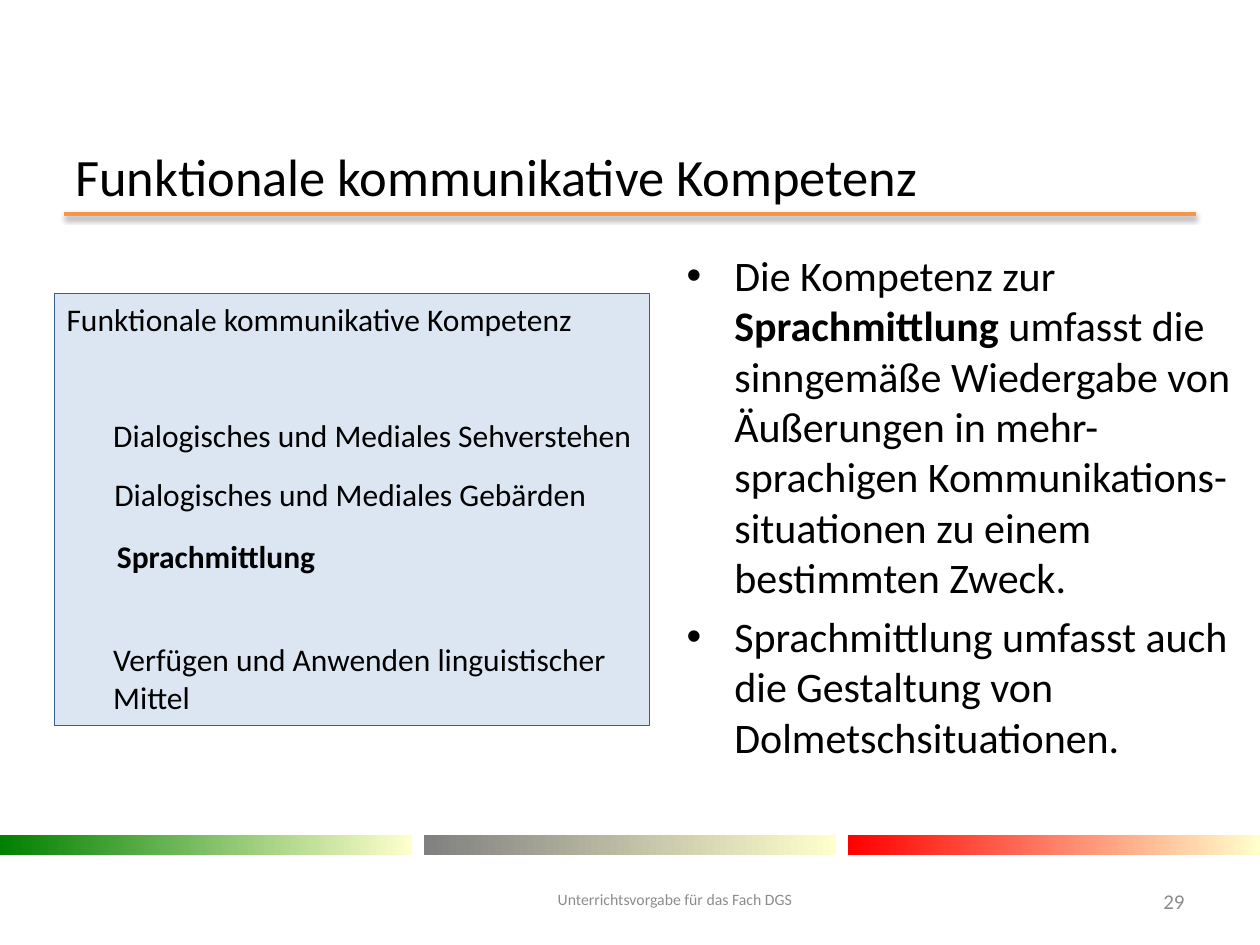
from lxml.etree import SubElement
from pptx import Presentation
from pptx.dml.color import RGBColor
from pptx.enum.shapes import MSO_CONNECTOR as CONNECTOR, MSO_SHAPE as SHAPE
from pptx.enum.text import MSO_ANCHOR as ANCHOR, PP_ALIGN as ALIGN
from pptx.oxml.ns import qn
from pptx.util import Inches, Pt


def color(value):
    """Turn a hex string into a colour."""
    return RGBColor.from_string(value)


def write(frame, paragraphs, size=18, ink="000000", align=ALIGN.LEFT, anchor=ANCHOR.TOP,
          line=None, before=0, after=0, bullet_indent=None):
    """Fill a text frame; each paragraph is a list of (text, bold) runs."""
    frame.word_wrap = True
    frame.vertical_anchor = anchor
    for index, runs in enumerate(paragraphs):
        paragraph = frame.add_paragraph() if index else frame.paragraphs[0]
        if bullet_indent:
            props = paragraph._p.get_or_add_pPr()
            props.set("marL", str(bullet_indent))
            props.set("indent", str(-bullet_indent))
            SubElement(props, qn("a:buFont"), typeface="Arial")
            SubElement(props, qn("a:buChar"), char="•")
        paragraph.alignment = align
        paragraph.line_spacing = line
        paragraph.space_before = Pt(before if index else 0)
        paragraph.space_after = Pt(after)
        for text, bold in runs:
            run = paragraph.add_run()
            run.text = text
            run.font.name = "Calibri"
            run.font.size = Pt(size)
            run.font.bold = bold
            run.font.color.rgb = color(ink)


def add_text(slide, box, text, bold=False, **style):
    """Place a single paragraph in a text box."""
    label = slide.shapes.add_textbox(*map(Inches, box))
    write(label.text_frame, [[(text, bold)]], **style)


def add_panel(slide, box):
    """Place a plain rectangle without line or shadow."""
    panel = slide.shapes.add_shape(SHAPE.RECTANGLE, *map(Inches, box))
    panel.shadow.inherit = False
    panel.line.fill.background()
    return panel


def add_heading(slide, box):
    """Place the title and the shadowed rule below it."""
    left, top, width, height = box
    add_text(slide, box, "Funktionale kommunikative Kompetenz", size=30,
             anchor=ANCHOR.MIDDLE, line=0.9)
    rule_y = Inches(top + height + 0.08)
    rule = slide.shapes.add_connector(CONNECTOR.STRAIGHT, Inches(left + 0.01), rule_y,
                                      Inches(left + width - 0.01), rule_y)
    rule.line.color.rgb = color("F79646")
    rule.line.width = Pt(2)
    effects = SubElement(rule._element.spPr, qn("a:effectLst"))
    shadow = SubElement(effects, qn("a:outerShdw"), blurRad=str(Pt(3.1)), dist=str(Pt(1.6)),
                        dir="5400000", rotWithShape="0")
    black = SubElement(shadow, qn("a:srgbClr"), val="000000")
    SubElement(black, qn("a:alpha"), val="38000")


def add_stripes(slide, box):
    """Place the three gradient bars across the box."""
    left, top, width, height = box
    bar_width = 3.27
    step = (width - bar_width) / 2
    for index, start in enumerate(("008000", "808080", "FF0000")):
        bar = add_panel(slide, (left + index * step, top, bar_width, height))
        bar.fill.gradient()
        bar.fill.gradient_angle = 0
        for stop, value in zip(bar.fill.gradient_stops, (start, "FFFFCC")):
            stop.color.rgb = color(value)


def add_competences(slide, box):
    """Place the framed list of competences."""
    left, top, width, height = box
    frame = add_panel(slide, box)
    frame.fill.solid()
    frame.fill.fore_color.rgb = color("DCE6F2")
    frame.line.color.rgb = color("376092")
    frame.line.width = Pt(0.25)
    write(frame.text_frame, [[("Funktionale kommunikative Kompetenz", False)]])
    entries = (
        (0.37, 0.92, 4.42, 0.4, "Dialogisches und Mediales Sehverstehen", False),
        (0.38, 1.39, 4.26, 0.4, "Dialogisches und Mediales Gebärden", False),
        (0.4, 1.88, 4.26, 0.4, "Sprachmittlung", True),
        (0.37, 2.7, 4.26, 0.71, "Verfügen und Anwenden linguistischer Mittel", False),
    )
    for dx, dy, entry_width, entry_height, text, bold in entries:
        add_text(slide, (left + dx, top + dy, entry_width, entry_height), text, bold)


def add_explanation(slide, box):
    """Place the bulleted explanation."""
    panel = add_panel(slide, box)
    panel.fill.solid()
    panel.fill.fore_color.rgb = color("FFFFFF")
    write(panel.text_frame, [
        [("Die Kompetenz zur ", False), ("Sprachmittlung", True),
         (" umfasst die sinngemäße Wiedergabe von Äußerungen in mehr-sprachigen "
          "Kommunikations-situationen zu einem bestimmten Zweck.", False)],
        [("Sprachmittlung umfasst auch die Gestaltung von Dolmetschsituationen.", False)],
    ], size=24, before=4.8, bullet_indent=Inches(0.38))


def add_footer(slide, box):
    """Place the footer text and the page number."""
    left, top, width, height = box
    number_width = 0.64
    style = {"ink": "8C8C8C", "anchor": ANCHOR.MIDDLE, "after": 6}
    add_text(slide, (left, top, 3.23, height), "Unterrichtsvorgabe für das Fach DGS",
             size=9, align=ALIGN.CENTER, line=0.9, **style)
    add_text(slide, (left + width - number_width, top, number_width, height), "29",
             size=12, align=ALIGN.RIGHT, **style)


def main():
    """Build and save the slide."""
    deck = Presentation()
    deck.slide_width, deck.slide_height = Inches(10), Inches(7.5)
    slide = deck.slides.add_slide(deck.slide_layouts[6])
    add_stripes(slide, (0, 6.63, 10, 0.16))
    add_heading(slide, (0.5, 1.23, 9, 0.39))
    add_explanation(slide, (5.35, 1.93, 4.62, 4.57))
    add_footer(slide, (3.74, 6.95, 5.76, 0.4))
    add_competences(slide, (0.43, 2.33, 4.72, 3.43))
    deck.save("out.pptx")


if __name__ == "__main__":
    main()
